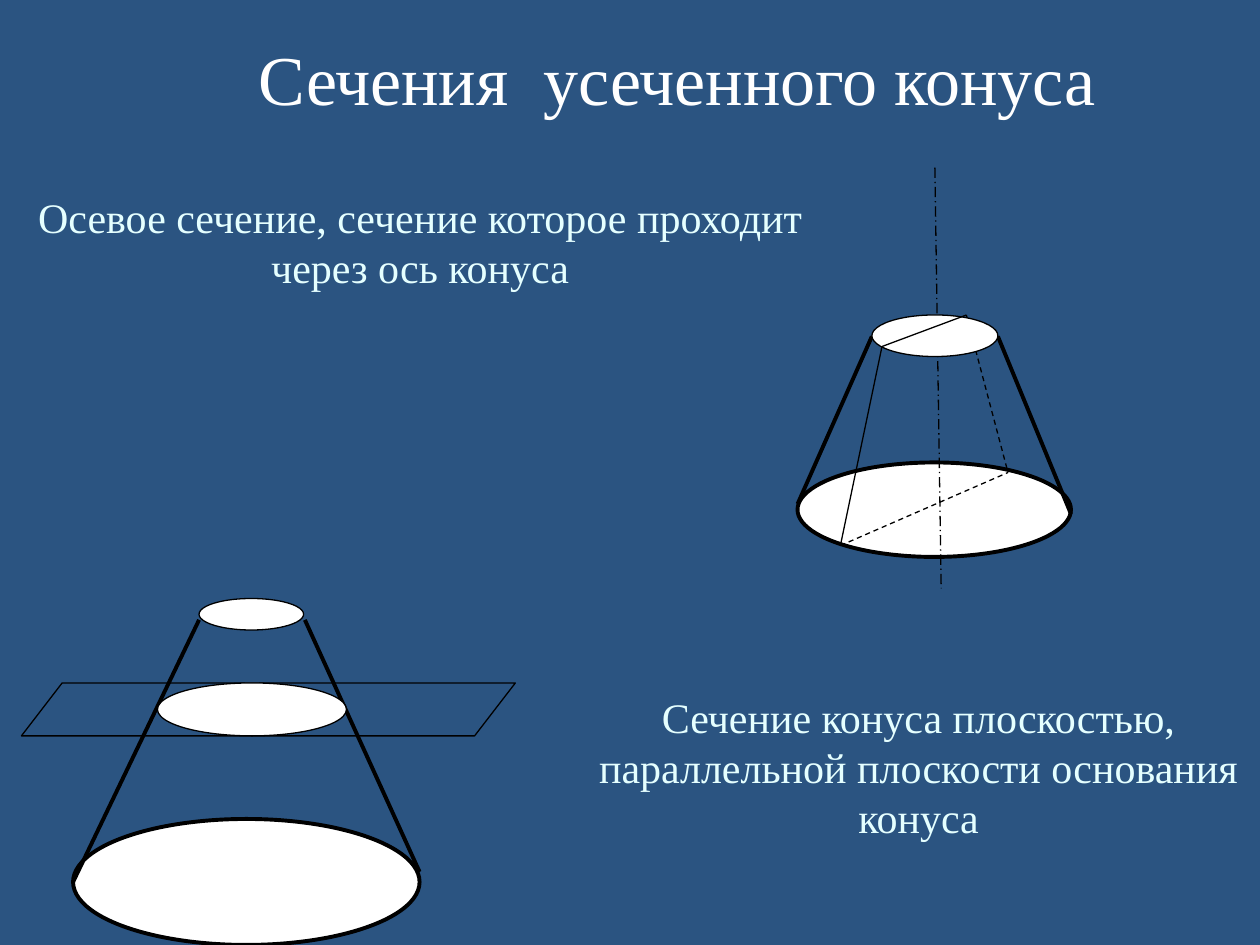
from lxml import etree
from pptx import Presentation
from pptx.dml.color import RGBColor
from pptx.enum import dml, shapes, text
from pptx.oxml.ns import qn
from pptx.util import Inches, Pt

COLORS = {"back": "2B5481", "title": "FFFFFF", "note": "E5FFFF",
          "face": "FFFFFF", "edge": "000000"}
FONT = "Times New Roman"
THIN, BOLD = 0.75, 2.25
DASH = dml.MSO_LINE.DASH
AXIS = dml.MSO_LINE.LONG_DASH_DOT
OVAL = shapes.MSO_SHAPE.OVAL
MID, TOP = text.MSO_ANCHOR.MIDDLE, text.MSO_ANCHOR.TOP

# Texts: wording, box, size, color, anchor, top inset
TEXTS = [
    ("Сечения  усеченного конуса", (1.5, 0.17, 7.75, 1), 40, "title", TOP, 0.11),
    ("Осевое сечение, сечение которое проходит через ось конуса",
     (0, 1.42, 6.67, 1), 24, "note", MID, 0.05),
    ("Сечение конуса плоскостью, параллельной плоскости основания конуса",
     (4.58, 5.5, 5.42, 1.17), 24, "note", MID, 0.05),
]

# Corners of the axial section: front and rear, upper and lower
FRONT_UP, FRONT_LOW = (7, 2.75), (6.67, 4.33)
REAR_UP, REAR_LOW = (7.67, 2.5), (8, 3.75)

# Cones, back to front: ("oval", box, width), ("line", from, to, width, dash)
# or ("plane", box, width)
AXIAL = [
    ("oval", (6.33, 3.67, 2.17, 0.75), BOLD),
    ("line", (6.92, 2.67), (6.33, 4), BOLD, None),
    ("line", (7.92, 2.67), (8.5, 4.08), BOLD, None),
    ("line", FRONT_UP, FRONT_LOW, THIN, None),
    ("line", REAR_UP, REAR_LOW, THIN, DASH),
    ("line", FRONT_LOW, REAR_LOW, THIN, DASH),
    ("line", (7.42, 1.33), (7.47, 4.67), THIN, AXIS),
    ("oval", (6.92, 2.5, 1, 0.33), THIN),
    ("line", REAR_UP, FRONT_UP, THIN, None),
]
PARALLEL = [
    ("oval", (0.58, 6.5, 2.75, 1), BOLD),
    ("line", (1.58, 4.92), (0.58, 7), BOLD, None),
    ("line", (2.42, 4.92), (3.33, 6.92), BOLD, None),
    ("plane", (0.17, 5.42, 3.92, 0.42), THIN),
    ("oval", (1.25, 5.42, 1.5, 0.42), THIN),
    ("oval", (1.58, 4.75, 0.83, 0.25), THIN),
]


def color(name):
    return RGBColor.from_string(COLORS[name])


def inches(nums):
    return [Inches(n) for n in nums]


def outline(item, width):
    item.line.color.rgb = color("edge")
    item.line.width = Pt(width)


def add_text(slide, words, box, size, tone, anchor, inset):
    frame = slide.shapes.add_textbox(*inches(box)).text_frame
    frame.word_wrap = True
    frame.vertical_anchor = anchor
    frame.margin_top = Inches(inset)
    para = frame.paragraphs[0]
    para.text = words
    para.alignment = text.PP_ALIGN.CENTER
    para.font.name = FONT
    para.font.size = Pt(size)
    para.font.color.rgb = color(tone)


def add_oval(slide, box, width):
    oval = slide.shapes.add_shape(OVAL, *inches(box))
    oval.shadow.inherit = False
    oval.fill.solid()
    oval.fill.fore_color.rgb = color("face")
    outline(oval, width)


def add_plane(slide, box, width):
    plane = slide.shapes.add_shape(shapes.MSO_SHAPE.PARALLELOGRAM, *inches(box))
    plane.adjustments[0] = 0.77
    plane.shadow.inherit = False
    plane.fill.background()
    outline(plane, width)


def add_line(slide, start, end, width, dash):
    line = slide.shapes.add_connector(
        shapes.MSO_CONNECTOR.STRAIGHT, *inches(start + end))
    outline(line, width)
    if dash:
        line.line.dash_style = dash
    etree.SubElement(line._element.spPr, qn("a:effectLst"))


def main():
    prs = Presentation()
    prs.slide_width, prs.slide_height = Inches(10), Inches(7.5)
    slide = prs.slides.add_slide(prs.slide_layouts[6])
    slide.background.fill.solid()
    slide.background.fill.fore_color.rgb = color("back")

    # Title and notes
    for item in TEXTS:
        add_text(slide, *item)

    # Both cones
    draw = {"oval": add_oval, "plane": add_plane, "line": add_line}
    for kind, *args in AXIAL + PARALLEL:
        draw[kind](slide, *args)

    prs.save("out.pptx")


if __name__ == "__main__":
    main()
